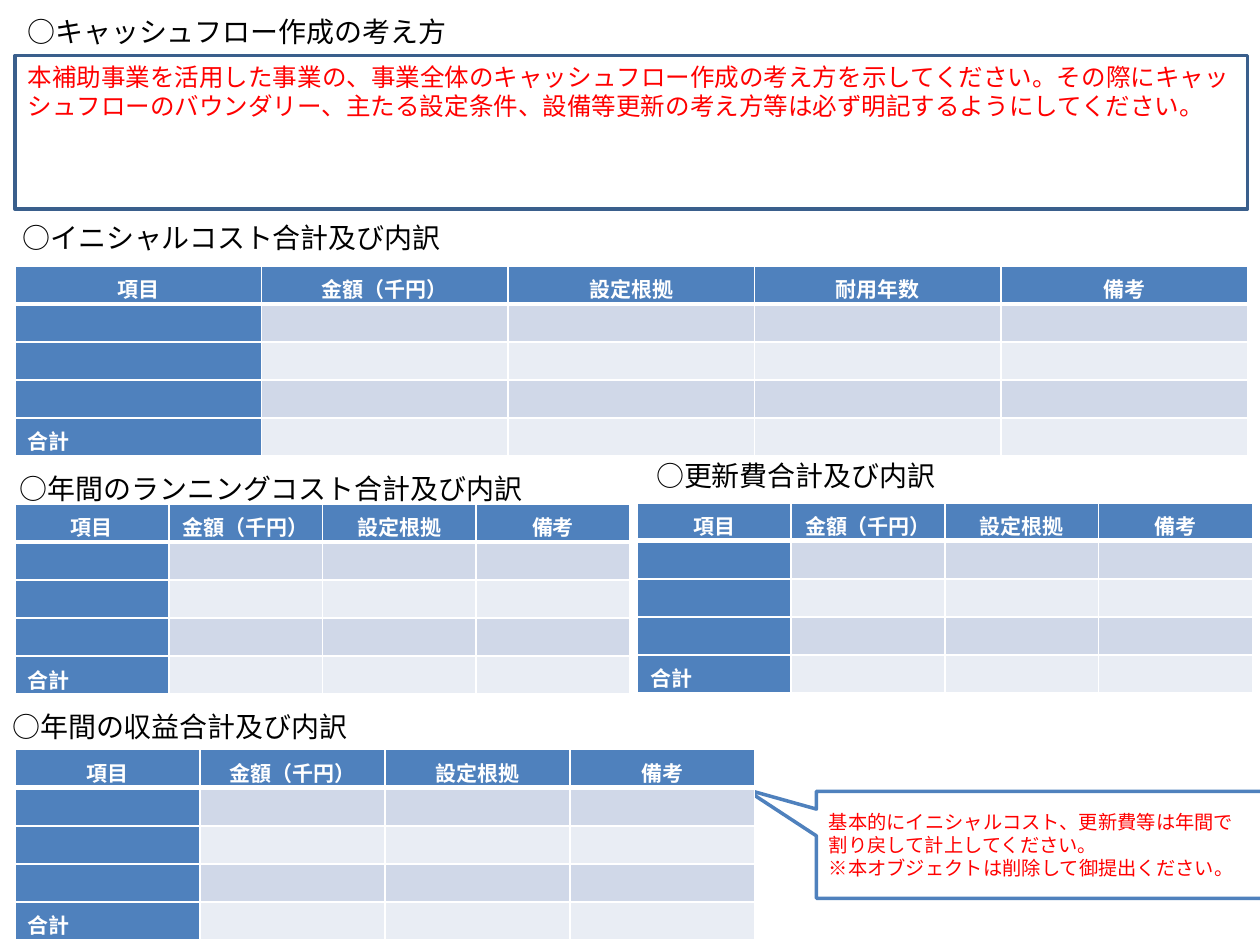
"""Build the cash-flow planning slide with its cost and revenue breakdown tables."""
from lxml.etree import SubElement
from pptx import Presentation
from pptx.dml.color import RGBColor
from pptx.enum.shapes import MSO_SHAPE
from pptx.enum.text import MSO_ANCHOR, PP_ALIGN
from pptx.oxml.ns import qn
from pptx.util import Inches, Pt

JAPANESE = "Noto Sans CJK JP"
BLUE, WHITE, RED = "4F81BD", "FFFFFF", "FF0000"
BANDS = ["E9EDF4", "D0D8E8"]


def rgb(value):
    return RGBColor.from_string(value)


def write(frame, text, size, color="000000", font=JAPANESE, bold=False,
          align=PP_ALIGN.LEFT, anchor=MSO_ANCHOR.TOP):
    frame.word_wrap = True
    frame.vertical_anchor = anchor
    frame.text = text
    for paragraph in frame.paragraphs:
        paragraph.alignment = align
        for run in paragraph.runs:
            run.font.size = Pt(size)
            run.font.bold = bold
            run.font.name = font
            run.font.color.rgb = rgb(color)
            SubElement(run.font._element, qn("a:ea"), typeface=JAPANESE)


prs = Presentation()
prs.slide_width, prs.slide_height = Inches(10), Inches(7.5)
slide = prs.slides.add_slide(prs.slide_layouts[6])
shapes = slide.shapes

headings = [
    ("○キャッシュフロー作成の考え方", 0.12, 0.07, 4.59),
    ("○イニシャルコスト合計及び内訳", 0.08, 1.7, 4.59),
    ("○年間のランニングコスト合計及び内訳", 0.06, 3.69, 4.59),
    ("○年間の収益合計及び内訳", 0, 5.58, 4.59),
    ("○更新費合計及び内訳", 5.11, 3.59, 2.86),
]
for heading, left, top, width in headings:
    box = shapes.add_textbox(Inches(left), Inches(top), Inches(width), Inches(0.37))
    write(box.text_frame, heading, 16)

policy = shapes.add_shape(MSO_SHAPE.RECTANGLE, Inches(0.12), Inches(0.44), Inches(9.78), Inches(1.22))
policy.fill.background()
policy.line.color.rgb = rgb("3A5F8C")
write(policy.text_frame,
      "本補助事業を活用した事業の、事業全体のキャッシュフロー作成の考え方を示してください。"
      "その際にキャッシュフローのバウンダリー、主たる設定条件、設備等更新の考え方等は"
      "必ず明記するようにしてください。", 14, color=RED)

callout = shapes.add_shape(MSO_SHAPE.RECTANGULAR_CALLOUT, Inches(6.48), Inches(6.28), Inches(3.54), Inches(0.85))
callout.adjustments[0], callout.adjustments[1] = -0.66, -0.52
callout.fill.solid()
callout.fill.fore_color.rgb = rgb(WHITE)
callout.line.color.rgb = rgb(BLUE)
write(callout.text_frame,
      "基本的にイニシャルコスト、更新費等は年間で割り戻して計上してください。\n"
      "※本オブジェクトは削除して御提出ください。", 11, color=RED, anchor=MSO_ANCHOR.MIDDLE)

for outlined in (policy, callout):
    outlined.shadow.inherit = False
    outlined.line.width = Pt(2)

basic_columns = ["項目", "金額（千円）", "設定根拠", "備考"]
initial_columns = ["項目", "金額（千円）", "設定根拠", "耐用年数", "備考"]
breakdowns = [
    (initial_columns, 0.12, 2.11, 9.78),
    (basic_columns, 0.12, 5.95, 5.87),
    (basic_columns, 0.12, 4, 4.88),
    (basic_columns, 5.06, 3.99, 4.88),
]
ROWS = 5
for columns, left, top, width in breakdowns:
    table = shapes.add_table(ROWS, len(columns), Inches(left), Inches(top), Inches(width), Inches(1.51)).table
    for row in range(ROWS):
        for col, label in enumerate(columns):
            cell = table.cell(row, col)
            cell.margin_top = cell.margin_bottom = 0
            cell.vertical_anchor = MSO_ANCHOR.BOTTOM
            is_header = row == 0
            text = label if is_header else "合計" if row == ROWS - 1 and col == 0 else ""
            if text:
                write(cell.text_frame, text, 12, color=WHITE, font="Calibri", bold=True,
                      align=PP_ALIGN.CENTER if is_header else PP_ALIGN.LEFT, anchor=MSO_ANCHOR.BOTTOM)
            properties = cell._tc.get_or_add_tcPr()
            for side in ("lnL", "lnR", "lnT", "lnB"):
                thick = (is_header and side == "lnB") or (row == 1 and side == "lnT")
                border = SubElement(properties, qn(f"a:{side}"), w=str(Pt(3 if thick else 1)))
                SubElement(SubElement(border, qn("a:solidFill")), qn("a:srgbClr"), val=WHITE)
            cell.fill.solid()
            cell.fill.fore_color.rgb = rgb(BLUE if is_header or col == 0 else BANDS[row % 2])

prs.save("out.pptx")
